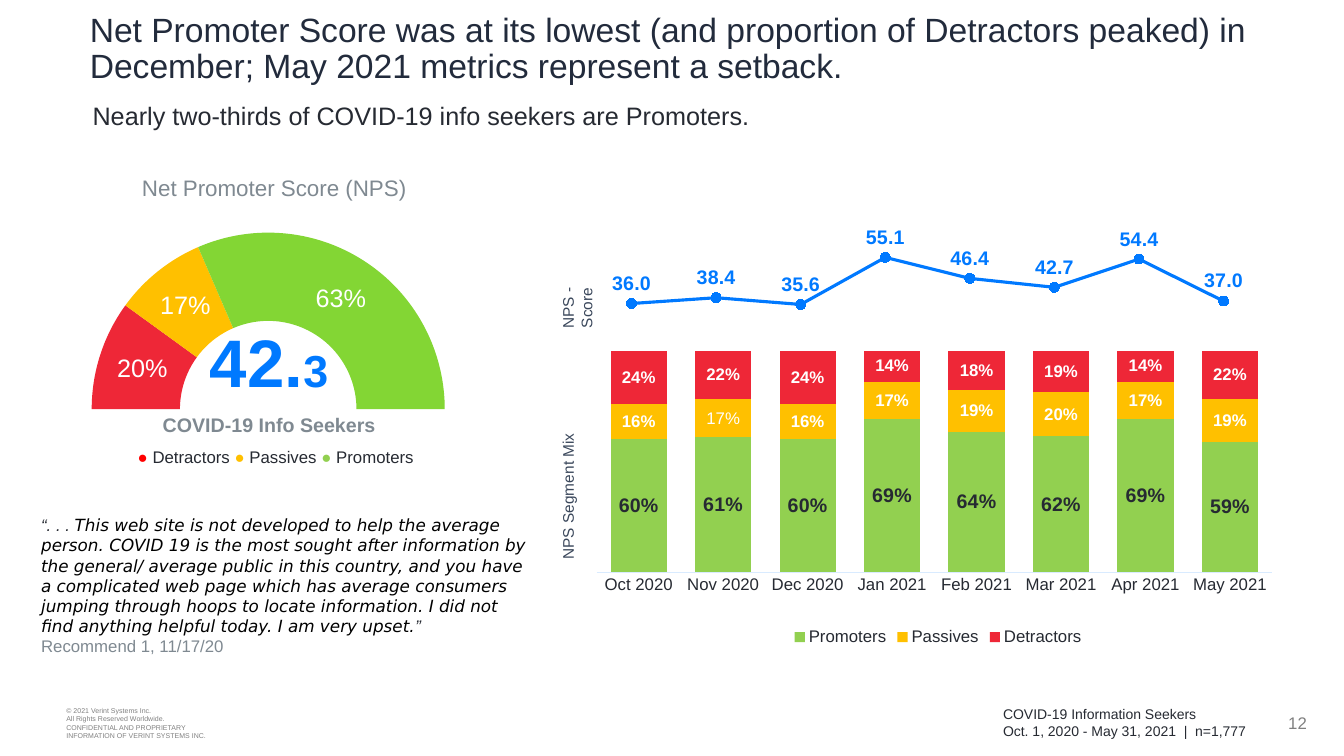
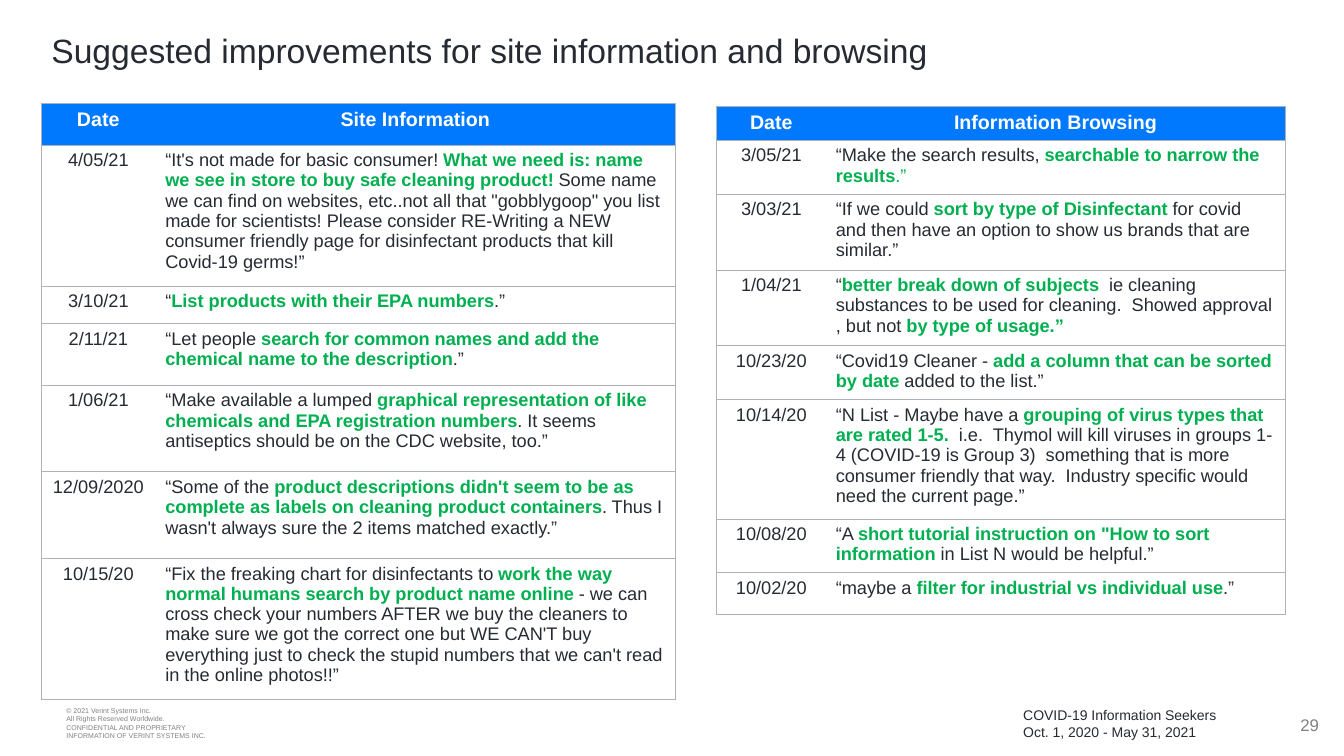
from lxml import etree
from pptx import Presentation
from pptx.chart.data import CategoryChartData
from pptx.dml.color import RGBColor
from pptx.enum.chart import XL_CHART_TYPE, XL_LABEL_POSITION, XL_LEGEND_POSITION, XL_MARKER_STYLE, XL_TICK_MARK
from pptx.enum.text import MSO_ANCHOR, MSO_AUTO_SIZE, PP_ALIGN
from pptx.oxml import parse_xml
from pptx.oxml.ns import nsdecls, qn
from pptx.util import Inches, Pt

FONT = "Arial"
PLAIN = "{2D5ABB26-0587-4C30-8999-92F81FD0307C}"
HUES = {
    "ink": "262A32", "navy": "222B3C", "slate": "3A475B", "gray": "7F8991",
    "foot": "808080", "blue": "0079FF", "pale": "D9EBFF", "rule": "ACB2B7",
    "red": "EE2737", "dot": "FF0000", "gold": "FFC000", "lime": "83D634",
    "leaf": "92D050", "green": "00B050", "white": "FFFFFF", "black": "000000",
}
COPY = ["© 2021 Verint Systems Inc.", "All Rights Reserved Worldwide.",
        "CONFIDENTIAL AND PROPRIETARY", "INFORMATION OF VERINT SYSTEMS INC."]


def hue(name):
    return RGBColor.from_string(HUES[name])


def style(font, size=12, color="ink", bold=False, italic=False, face=FONT):
    font.name, font.size = face, Pt(size)
    font.bold, font.italic = bold, italic
    font.color.rgb = hue(color)


def write(frame, paras, align=PP_ALIGN.LEFT, space=None, **look):
    for i, para in enumerate(paras):
        line = frame.add_paragraph() if i else frame.paragraphs[0]
        line.alignment = align
        if space:
            line.line_spacing = space
        for piece in [para] if isinstance(para, str) else para:
            words, extra = (piece, {}) if isinstance(piece, str) else piece
            run = line.add_run()
            run.text = words
            style(run.font, **{**look, **extra})


def text(slide, box, paras, anchor=MSO_ANCHOR.TOP, inset=(0.1, 0.05), turn=False, **look):
    frame = slide.shapes.add_textbox(*map(Inches, box)).text_frame
    frame.word_wrap = True
    frame.vertical_anchor = anchor
    frame.margin_left = frame.margin_right = Inches(inset[0])
    frame.margin_top = frame.margin_bottom = Inches(inset[1])
    if turn:
        frame._txBody.bodyPr.set("vert", "vert270")
    write(frame, paras, **look)


def page(deck, title, box, number, spot, note, place, **look):
    slide = deck.slides.add_slide(deck.slide_layouts[5])
    head = slide.shapes.title
    head.left, head.top, head.width, head.height = map(Inches, box)
    frame = head.text_frame
    frame.word_wrap = True
    frame.auto_size = MSO_AUTO_SIZE.NONE
    frame.vertical_anchor = MSO_ANCHOR.BOTTOM
    write(frame, [title], size=24, **look)
    mid = MSO_ANCHOR.MIDDLE
    text(slide, (0.56, 6.94, 2.4, 0.47), COPY, anchor=mid, size=5, color="foot")
    text(slide, (*spot, 0.55, 0.4), [number], anchor=mid, align=PP_ALIGN.RIGHT, color="foot")
    text(slide, (*place, 2.85, 0.47), ["COVID-19 Information Seekers", note],
         anchor=mid, inset=(0.1, 0), size=10)
    return slide


def plot(slide, kind, box, area, cats, rows, form):
    data = CategoryChartData(number_format=form)
    data.categories = cats
    for name, vals in rows:
        data.add_series(name, vals)
    chart = slide.shapes.add_chart(kind, *map(Inches, box), data).chart
    chart.has_title = chart.has_legend = False
    root = chart._chartSpace
    root.find(qn("c:chart")).addnext(parse_xml(
        f'<c:spPr {nsdecls("c", "a")}><a:noFill/><a:ln><a:noFill/></a:ln></c:spPr>'))
    style(chart.font)
    zone = root.find(".//" + qn("c:plotArea"))
    for old in zone.findall(qn("c:layout")):
        zone.remove(old)
    spots = "".join(f'<c:{tag} val="{val}"/>' for tag, val in zip("xywh", area))
    zone.insert(0, parse_xml(
        f'<c:layout {nsdecls("c")}><c:manualLayout><c:layoutTarget val="inner"/>'
        f'<c:xMode val="edge"/><c:yMode val="edge"/>{spots}</c:manualLayout></c:layout>'))
    return chart


def label(series, form, spot=None, **look):
    tags = series.data_labels
    tags.show_value = True
    tags.number_format, tags.number_format_is_linked = form, False
    if spot is not None:
        tags.position = spot
    style(tags.font, **look)
    return tags


def gauge(slide):
    chart = plot(slide, XL_CHART_TYPE.DOUGHNUT, (0.23, 2.14, 4.72, 3.85),
                 (0.144, 0.005, 0.742, 0.987), ["1", "2", "3", "4"],
                 [("Series 1", [100, 20, 17, 63])], "General")
    ring = chart._chartSpace.find(".//" + qn("c:doughnutChart"))
    ring.find(qn("c:firstSliceAng")).set("val", "90")
    ring.find(qn("c:holeSize")).set("val", "65")
    series = chart.plots[0].series[0]
    for i, name in enumerate([None, "red", "gold", "lime"]):
        look = series.points[i].format
        look.line.fill.background()
        if name:
            look.fill.solid()
            look.fill.fore_color.rgb = hue(name)
        else:
            look.fill.background()
    tags = label(series, '0"%"', size=18, color="white")
    tags._element.insert(0, parse_xml(
        f'<c:dLbl {nsdecls("c")}><c:idx val="0"/><c:delete val="1"/></c:dLbl>'))


def bare(axis):
    axis.has_major_gridlines = False
    axis.visible = False


def mix(slide):
    months = ["Oct 2020", "Nov 2020", "Dec 2020", "Jan 2021",
              "Feb 2021", "Mar 2021", "Apr 2021", "May 2021"]
    rows = [("Promoters", [0.6, 0.61, 0.6, 0.69, 0.64, 0.62, 0.69, 0.59]),
            ("Passives", [0.16, 0.17, 0.16, 0.17, 0.19, 0.2, 0.17, 0.19]),
            ("Detractors", [0.24, 0.22, 0.24, 0.14, 0.18, 0.19, 0.14, 0.22])]
    chart = plot(slide, XL_CHART_TYPE.COLUMN_STACKED_100, (5.91, 1.86, 6.79, 4.59),
                 (0.001, 0.353, 0.987, 0.479), months, rows, "0%")
    bars = chart.plots[0]
    bars.gap_width, bars.overlap = 50, 100
    bare(chart.value_axis)
    axis = chart.category_axis
    axis.major_tick_mark = XL_TICK_MARK.NONE
    axis.format.line.color.rgb = hue("pale")
    axis.format.line.width = Pt(0.75)
    style(axis.tick_labels.font)
    looks = [("leaf", 14, "ink"), ("gold", 12, "white"), ("red", 12, "white")]
    for series, (fill, size, color) in zip(bars.series, looks):
        series.format.fill.solid()
        series.format.fill.fore_color.rgb = hue(fill)
        label(series, "0%", XL_LABEL_POSITION.CENTER, size=size, color=color, bold=True)
    odd = bars.series[1].points[1].data_label
    style(odd.font, color="white")
    odd.position = XL_LABEL_POSITION.CENTER
    chart.has_legend = True
    chart.legend.position = XL_LEGEND_POSITION.BOTTOM
    chart.legend.include_in_layout = False
    style(chart.legend.font)


def trend(slide):
    chart = plot(slide, XL_CHART_TYPE.LINE_MARKERS, (5.65, 1.19, 6.94, 3),
                 (0.028, 0.096, 0.967, 0.799), [str(n) for n in range(1, 9)],
                 [("Series 1", [36, 38.4, 35.6, 55.1, 46.4, 42.7, 54.4, 37])], "0.0")
    bare(chart.category_axis)
    bare(chart.value_axis)
    chart.value_axis.minimum_scale, chart.value_axis.maximum_scale = 0, 100
    chart.plots[0].vary_by_categories = False
    series = chart.plots[0].series[0]
    series.smooth = False
    series.format.line.color.rgb = hue("blue")
    series.format.line.width = Pt(2.25)
    mark = series.marker
    mark.style, mark.size = XL_MARKER_STYLE.CIRCLE, 7
    mark.format.fill.solid()
    mark.format.fill.fore_color.rgb = hue("blue")
    mark.format.line.color.rgb = hue("blue")
    label(series, "0.0", XL_LABEL_POSITION.ABOVE, size=14, color="blue", bold=True)


def edge(cell, sides):
    props = cell._tc.get_or_add_tcPr()
    for i, side in enumerate(sides):
        line = etree.Element(qn("a:ln" + side), w=str(Pt(0.75)))
        fill = etree.SubElement(line, qn("a:solidFill"))
        etree.SubElement(fill, qn("a:srgbClr"), val=HUES["rule"])
        props.insert(i, line)


def grid(slide, spot, wides, highs, topic, rows):
    box = (*spot, sum(wides), sum(highs))
    table = slide.shapes.add_table(len(highs), 2, *map(Inches, box)).table
    table._tbl.tblPr.find(qn("a:tableStyleId")).text = PLAIN
    table.horz_banding = False
    for col, wide in zip(table.columns, wides):
        col.width = Inches(wide)
    for row, high in zip(table.rows, highs):
        row.height = Inches(high)
    for r, (date, quote) in enumerate([("Date", [topic]), *rows]):
        for c, para in enumerate([date, quote]):
            cell = table.cell(r, c)
            if r:
                cell.fill.background()
                look = dict(size=13)
            else:
                cell.fill.solid()
                cell.fill.fore_color.rgb = hue("blue")
                look = dict(size=14, color="white", bold=True)
            side = PP_ALIGN.LEFT if r and c else PP_ALIGN.CENTER
            write(cell.text_frame, [para], align=side, **look)
            edge(cell, "RTB" if c else "LTB")


def hit(words):
    return words, dict(color="green", bold=True)


def score(deck):
    slide = page(deck, "Net Promoter Score was at its lowest (and proportion of Detractors peaked) in "
                 "December; May 2021 metrics represent a setback.", (0.79, 0.05, 12.14, 0.85),
                 "12", (12.51, 6.97), "Oct. 1, 2020 - May 31, 2021  |  n=1,777", (9.85, 6.93),
                 color="navy", space=0.9)
    mid = PP_ALIGN.CENTER
    gauge(slide)
    text(slide, (0.82, 0.74, 12.2, 0.6), ["Nearly two-thirds of COVID-19 info seekers are Promoters."],
         anchor=MSO_ANCHOR.BOTTOM, size=18)
    text(slide, (1.86, 3.18, 1.62, 0.81), [["42.", ("3", dict(size=32))]],
         inset=(0, 0), align=mid, size=48, color="blue", bold=True)
    text(slide, (0.93, 4.05, 3.48, 0.34), ["COVID-19 Info Seekers"],
         align=mid, size=14, color="gray", bold=True)
    text(slide, (1.03, 1.68, 3.38, 0.37), ["Net Promoter Score (NPS)"],
         align=mid, size=16, color="gray")
    text(slide, (0.82, 4.38, 3.83, 0.3),
         [[("● ", dict(color="dot")), "Detractors ", ("●", dict(color="gold")), " Passives ",
           ("●", dict(color="leaf")), " Promoters"]], align=mid)
    for words, top, high in [("NPS - Score", 2.54, 1.03), ("NPS Segment Mix", 4.17, 1.51)]:
        text(slide, (5.49, top, 0.39, high), [words], turn=True, align=mid, size=11, color="slate")
    mix(slide)
    trend(slide)
    voice = ("This web site is not developed to help the average person. COVID 19 is the most sought "
             "after information by the general/ average public in this country, and you have a "
             "complicated web page which has average consumers jumping through hoops to locate "
             "information. I did not find anything helpful today. I am very upset.")
    text(slide, (0.31, 5.06, 5.04, 1.51),
         [["“. . . ", (voice, dict(face="DejaVu Sans", color="black")), "”"],
          [("Recommend 1, 11/17/20", dict(color="gray", italic=False))]], italic=True)


def ideas(deck):
    slide = page(deck, "Suggested improvements for site information and browsing",
                 (0.41, 0.28, 12.45, 0.47), "29", (12.63, 6.99),
                 "Oct. 1, 2020 - May 31, 2021", (10.05, 6.94))
    grid(slide, (7.11, 1.06), (1.08, 4.56), (0.31, 0.51, 0.71, 0.71, 0.5, 1.11, 0.51, 0.41),
         "Information Browsing", [
        ("3/05/21", ["“Make the search results, ", hit("searchable to narrow the results"),
                     (".”", dict(color="green"))]),
        ("3/03/21", ["“If we could ", hit("sort by type of Disinfectant "),
                     "for covid and then have an option to show us brands that are similar.”"]),
        ("1/04/21", ["“", hit("better break down of subjects  "),
                     "ie cleaning substances to be used for cleaning.  Showed approval , but not ",
                     hit("by type of usage.”")]),
        ("10/23/20", ["“Covid19 Cleaner - ", hit("add a column that can be sorted by date "),
                      "added to the list.”"]),
        ("10/14/20", ["“N List - Maybe have a ", hit("grouping of virus types that are rated 1-5.  "),
                      "i.e.  Thymol will kill viruses in groups 1-4 (COVID-19 is Group 3)  something "
                      "that is more consumer friendly that way.  Industry specific would need the "
                      "current page.”"]),
        ("10/08/20", ["“A ", hit('short tutorial instruction on "How to sort information '),
                      "in List N would be helpful.”"]),
        ("10/02/20", ["“maybe a ", hit("filter for industrial vs individual use"), ".”"]),
    ])
    grid(slide, (0.41, 1.03), (1.13, 5.16), (0.41, 1.35, 0.37, 0.61, 0.86, 0.86, 1.35),
         "Site Information", [
        ("4/05/21", ["“It's not made for basic consumer! ",
                     hit("What we need is: name we see in store to buy safe cleaning product! "),
                     'Some name we can find on websites, etc..not all that "gobblygoop" you list made '
                     "for scientists! Please consider RE-Writing a NEW consumer friendly page for "
                     "disinfectant products that kill Covid-19 germs!”"]),
        ("3/10/21", ["“", hit("List products with their EPA numbers"), ".”"]),
        ("2/11/21", ["“Let people ",
                     hit("search for common names and add the chemical name to the description"), ".”"]),
        ("1/06/21", ["“Make available a lumped ",
                     hit("graphical representation of like chemicals and EPA registration numbers"),
                     ". It seems antiseptics should be on the CDC website, too.”"]),
        ("12/09/2020", ["“Some of the ",
                        hit("product descriptions didn't seem to be as complete as labels on "
                            "cleaning product containers"),
                        ". Thus I wasn't always sure the 2 items matched exactly.”"]),
        ("10/15/20", ["“Fix the freaking chart for disinfectants to ",
                      hit("work the way normal humans search by product name online "),
                      "- we can cross check your numbers AFTER we buy the cleaners to make sure we got "
                      "the correct one but WE CAN'T buy everything just to check the stupid numbers "
                      "that we can't read in the online photos!!”"]),
    ])


def main():
    deck = Presentation()
    deck.slide_width, deck.slide_height = Inches(13.33), Inches(7.5)
    score(deck)
    ideas(deck)
    deck.save("out.pptx")


if __name__ == "__main__":
    main()
